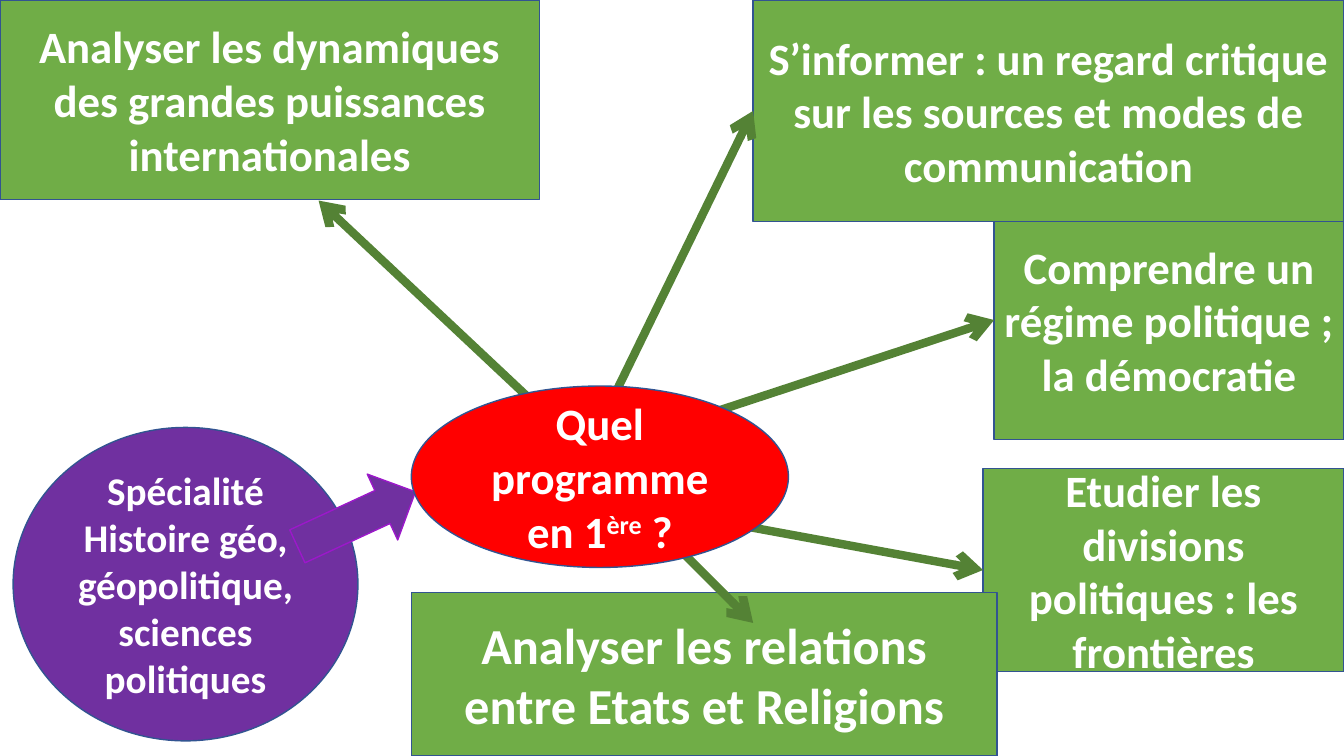
from lxml import etree
from pptx import Presentation
from pptx import util as u
from pptx.dml.color import RGBColor
from pptx.enum import shapes, text
from pptx.oxml import ns

PX = 9144
PAGE_WIDTH, PAGE_HEIGHT = 1333, 750
FONT = "Calibri"
COLORS = {
    "theme": "70AD47",
    "theme_arrow": "548235",
    "specialty": "7030A0",
    "specialty_arrow": "9C18CA",
    "hub": "FF0000",
    "edge": "325491",
    "label": "FFFFFF",
}
LEFT_SIDE = 1

# label, size, box, arrow start, arrow end, side joined
THEMES = [
    ("Comprendre un régime politique ; la démocratie", 32,
     (986, 199, 347, 237), (580, 451), (986, 318), LEFT_SIDE),
    ("Analyser les dynamiques des grandes puissances internationales", 32,
     (0, 0, 535, 198), (580, 447), (316, 199), None),
    ("S’informer : un regard critique sur les sources et modes de communication", 32,
     (747, 0, 586, 220), (584, 444), (747, 110), LEFT_SIDE),
    ("Etudier les divisions politiques : les frontières", 32,
     (975, 465, 358, 201), (586, 494), (975, 565), LEFT_SIDE),
    ("Analyser les relations entre Etats et Religions", 36,
     (408, 588, 581, 162), (583, 454), (747, 618), None),
]


def px(*lengths):
    """Turn px lengths into EMU."""
    return [u.Emu(length * PX) for length in lengths]


def color(name):
    """Look up a named colour."""
    return RGBColor.from_string(COLORS[name])


def add_block(page, kind, box, fill, edge="edge"):
    """Add a flat filled shape with a thin outline."""
    block = page.shapes.add_shape(kind, *px(*box))
    block.shadow.inherit = False
    block.fill.solid()
    block.fill.fore_color.rgb = color(fill)
    block.line.color.rgb = color(edge)
    block.line.width = u.Pt(1)
    return block


def add_label(block, spans, size):
    """Write centred bold text, given as (words, raised) spans."""
    frame = block.text_frame
    frame.word_wrap = True
    frame.vertical_anchor = text.MSO_ANCHOR.MIDDLE
    para = frame.paragraphs[0]
    para.alignment = text.PP_ALIGN.CENTER
    para.font.name = FONT
    para.font.size = u.Pt(size)
    para.font.bold = True
    para.font.color.rgb = color("label")
    for words, raised in spans:
        span = para.add_run()
        span.text = words
        if raised:
            span._r.get_or_add_rPr().set("baseline", "30000")


def add_arrow(page, start, end, target, side):
    """Draw a thick arrow, joined to the target when a side is given."""
    arrow = page.shapes.add_connector(shapes.MSO_CONNECTOR.STRAIGHT, *px(*start, *end))
    if side is not None:
        arrow.end_connect(target, side)
    arrow.line.color.rgb = color("theme_arrow")
    arrow.line.width = u.Pt(6)
    etree.SubElement(arrow.line._get_or_add_ln(), ns.qn("a:tailEnd"), type="arrow")
    etree.SubElement(arrow._element.spPr, ns.qn("a:effectLst"))


def draw_specialty(page, box):
    """Draw the specialty circle and the block arrow leaving it."""
    left, top, width, height = box
    circle = add_block(page, shapes.MSO_SHAPE.OVAL, box, "specialty")
    add_label(circle, [("Spécialité Histoire géo, géopolitique, sciences politiques", False)], 28)
    pointer = add_block(page, shapes.MSO_SHAPE.RIGHT_ARROW,
                        (left + width - 66, top + 55, 129, 72),
                        "specialty", "specialty_arrow")
    pointer.rotation = 335.2


def draw_themes(page, box):
    """Draw the theme boxes, then the arrows pointing to them."""
    left, top, _, _ = box
    blocks = []
    for label, size, (x, y, width, height), *_ in THEMES:
        block = add_block(page, shapes.MSO_SHAPE.RECTANGLE,
                          (left + x, top + y, width, height), "theme")
        add_label(block, [(label, False)], size)
        blocks.append(block)
    for block, (_, _, _, start, end, side) in zip(blocks, THEMES):
        add_arrow(page, (left + start[0], top + start[1]),
                  (left + end[0], top + end[1]), block, side)


def draw_hub(page, box):
    """Draw the central question."""
    hub = add_block(page, shapes.MSO_SHAPE.OVAL, box, "hub")
    add_label(hub, [("Quel programme en 1", False), ("ère", True), (" ?", False)], 32)


def main():
    """Build the deck and save it."""
    deck = Presentation()
    deck.slide_width, deck.slide_height = px(PAGE_WIDTH, PAGE_HEIGHT)
    page = deck.slides.add_slide(deck.slide_layouts[6])
    draw_specialty(page, (13, 424, 342, 311))
    draw_themes(page, (0, 0, PAGE_WIDTH, PAGE_HEIGHT))
    draw_hub(page, (408, 383, 374, 180))
    deck.save("out.pptx")


if __name__ == "__main__":
    main()
